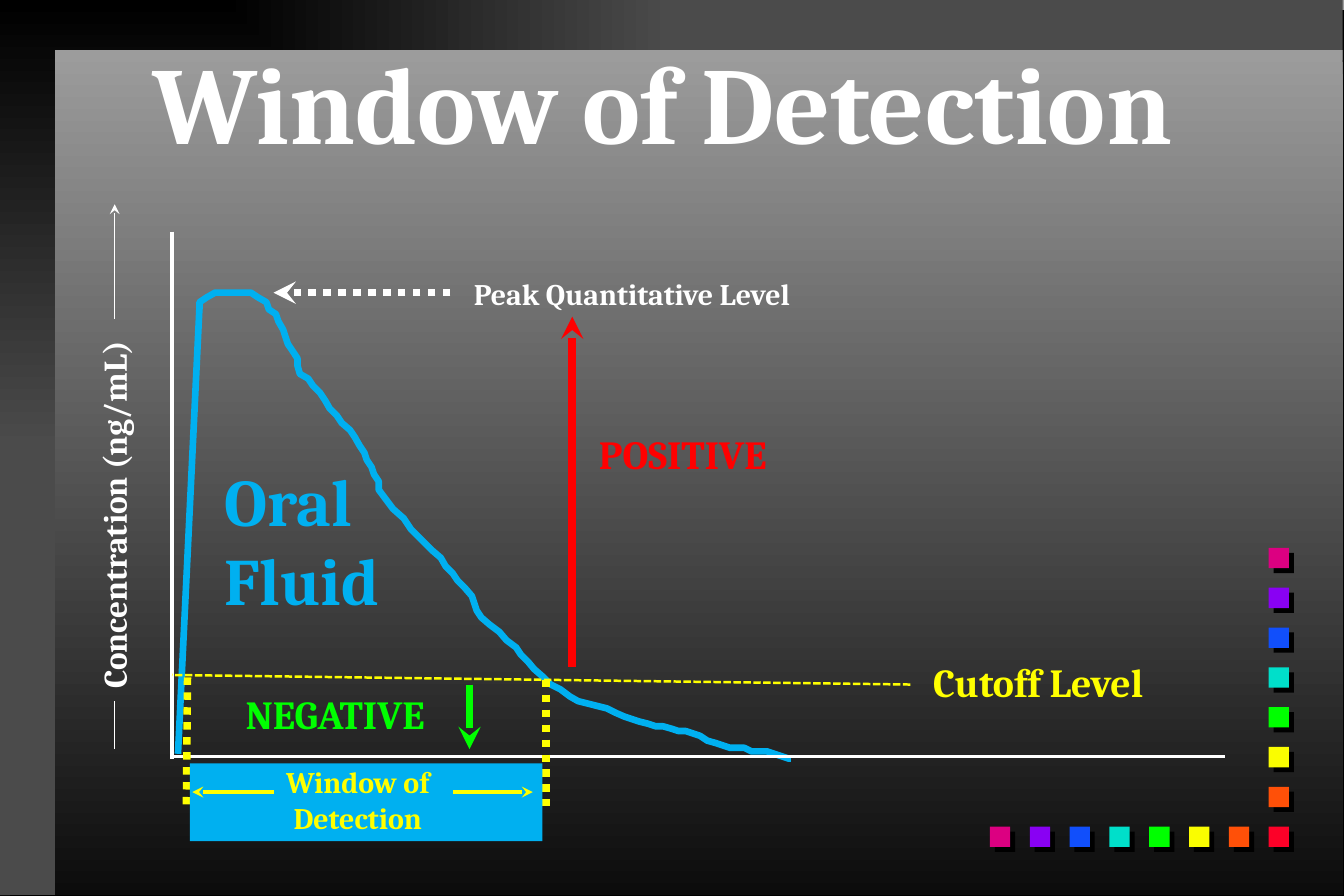
from lxml import etree
from pptx import Presentation, util as u
from pptx.dml.color import RGBColor
from pptx.enum import dml, shapes, text
from pptx.oxml import parse_xml
from pptx.oxml.ns import nsdecls, qn

COLORS = {
    "white": "FFFFFF", "black": "000000", "blue": "00B0F0",
    "yellow": "FFFF00", "green": "00FF00", "red": "FF0000",
    "gray_top": "9C9C9C", "gray_bottom": "0C0C0C", "frame": "4B4B4B",
}
# Decorative squares, from the corner outwards
SQUARES = ["FC0128", "FF5008", "FAFD00", "00FF00",
           "00DFCA", "114FFB", "8901F3", "DC0081"]
SYS_DOT, SYS_DASH = dml.MSO_LINE.ROUND_DOT, dml.MSO_LINE.SQUARE_DOT

# Falling part of the concentration curve, in inches
CURVE = [
    (1.67, 2.59), (1.67, 2.53), (1.73, 2.49), (1.8, 2.45), (2.1, 2.45),
    (2.16, 2.49), (2.23, 2.53), (2.25, 2.59), (2.31, 2.63), (2.33, 2.69),
    (2.37, 2.76), (2.39, 2.82), (2.41, 2.88), (2.45, 2.94), (2.49, 3),
    (2.49, 3.06), (2.51, 3.13), (2.58, 3.17), (2.62, 3.23), (2.68, 3.29),
    (2.72, 3.35), (2.76, 3.42), (2.82, 3.48), (2.86, 3.54), (2.93, 3.6),
    (2.97, 3.66), (3.01, 3.73), (3.05, 3.79), (3.07, 3.85), (3.11, 3.91),
    (3.13, 3.97), (3.17, 4.03), (3.17, 4.1), (3.23, 4.18), (3.29, 4.26),
    (3.38, 4.34), (3.44, 4.43), (3.5, 4.49), (3.56, 4.55), (3.62, 4.61),
    (3.69, 4.67), (3.73, 4.74), (3.79, 4.8), (3.83, 4.86), (3.89, 4.92),
    (3.95, 4.99), (3.97, 5.05), (3.99, 5.11), (4.03, 5.17), (4.1, 5.23),
    (4.18, 5.29), (4.24, 5.36), (4.32, 5.42), (4.36, 5.48), (4.42, 5.54),
    (4.47, 5.6), (4.55, 5.67), (4.61, 5.73), (4.69, 5.77), (4.77, 5.83),
    (4.84, 5.87), (4.92, 5.89), (5.08, 5.93), (5.16, 5.97), (5.23, 6),
    (5.29, 6.02), (5.35, 6.04), (5.43, 6.06), (5.49, 6.08), (5.55, 6.08),
    (5.62, 6.1), (5.68, 6.12), (5.74, 6.12), (5.8, 6.14), (5.86, 6.16),
    (5.92, 6.2), (5.99, 6.22), (6.05, 6.24), (6.11, 6.26), (6.23, 6.26),
    (6.29, 6.29), (6.42, 6.29), (6.48, 6.31), (6.54, 6.33), (6.6, 6.35),
    (6.62, 6.35),
]


def rgb(color):
    return RGBColor.from_string(COLORS.get(color, color))


class Deck:
    """Holds the text style and the current slide."""

    font = "Cambria"

    def __init__(self, width, height):
        self.prs = Presentation()
        self.prs.slide_width = u.Inches(width)
        self.prs.slide_height = u.Inches(height)
        self.s = self.prs.slides.add_slide(self.prs.slide_layouts[5])

    def gradient(self, fill, first, last):
        fill.gradient()
        fill.gradient_angle = 270
        for stop, color, position in zip(fill.gradient_stops, (first, last), (0, 1)):
            stop.color.rgb = rgb(color)
            stop.position = position

    def rect(self, x, y, w, h, color, last=None, shadow=0):
        sp = self.s.shapes.add_shape(
            shapes.MSO_SHAPE.RECTANGLE, *map(u.Inches, (x, y, w, h)))
        if last:
            self.gradient(sp.fill, color, last)
        else:
            sp.fill.solid()
            sp.fill.fore_color.rgb = rgb(color)
        sp.line.fill.background()
        sp.shadow.inherit = False
        if shadow:
            effects = sp.element.spPr.find(qn("a:effectLst"))
            effects.append(parse_xml(
                f'<a:outerShdw {nsdecls("a")} dist="{u.Pt(shadow)}" dir="2700000" '
                f'algn="ctr" rotWithShape="0"><a:srgbClr val="{COLORS["black"]}"/>'
                '</a:outerShdw>'))
        return sp

    def corner_gradient(self, sp):
        lin = next(sp.element.iter(qn("a:lin")))
        lin.getparent().replace(lin, parse_xml(
            f'<a:path {nsdecls("a")} path="rect">'
            '<a:fillToRect r="100000" b="100000"/></a:path>'))

    def line(self, start, end, color, width, dash=None, arrow=False):
        cx = self.s.shapes.add_connector(
            shapes.MSO_CONNECTOR.STRAIGHT, *map(u.Inches, start + end))
        cx.line.color.rgb = rgb(color)
        cx.line.width = u.Pt(width)
        if dash:
            cx.line.dash_style = dash
        if arrow:
            ln = cx.element.spPr.find(qn("a:ln"))
            etree.SubElement(ln, qn("a:tailEnd"), type="stealth")
        etree.SubElement(cx.element.spPr, qn("a:effectLst"))

    def curve(self, points, color, width):
        builder = self.s.shapes.build_freeform(
            *map(u.Inches, points[0]), scale=1.0)
        builder.add_line_segments(
            [tuple(map(u.Inches, point)) for point in points[1:]], close=False)
        sp = builder.convert_to_shape()
        sp.fill.background()
        sp.line.color.rgb = rgb(color)
        sp.line.width = u.Pt(width)
        sp.shadow.inherit = False

    def style(self, tf, size, color, align):
        for p in tf.paragraphs:
            p.alignment = align
            for r in p.runs:
                r.font.name = self.font
                r.font.size = u.Pt(size)
                r.font.bold = True
                r.font.color.rgb = rgb(color)

    def label(self, words, x, y, w, h, size, color,
              align=text.PP_ALIGN.CENTER, rotation=0):
        sp = self.s.shapes.add_textbox(*map(u.Inches, (x, y, w, h)))
        sp.rotation = rotation
        tf = sp.text_frame
        tf.text = words
        tf.word_wrap = False
        tf.auto_size = text.MSO_AUTO_SIZE.SHAPE_TO_FIT_TEXT
        self.style(tf, size, color, align)

    def title(self, words, x, y, w, h, size, color):
        sp = self.s.shapes.title
        self.s.shapes.element.append(sp.element)  # bring above the backdrop
        sp.left, sp.top, sp.width, sp.height = map(u.Inches, (x, y, w, h))
        tf = sp.text_frame
        tf.text = words
        tf.word_wrap = True
        tf.auto_size = text.MSO_AUTO_SIZE.NONE
        tf.vertical_anchor = text.MSO_ANCHOR.BOTTOM
        tf.paragraphs[0].line_spacing = 0.9
        self.style(tf, size, color, text.PP_ALIGN.CENTER)


def main():
    d = Deck(11.25, 7.5)
    left = text.PP_ALIGN.LEFT

    # Backdrop
    d.gradient(d.s.background.fill, "gray_top", "gray_bottom")
    d.corner_gradient(d.rect(0, 0, 11.24, 7.49, "black", "frame", shadow=8.5))
    d.rect(0.46, 0.42, 10.78, 7.07, "gray_top", "gray_bottom", shadow=8.5)

    # Row and column of squares sharing one corner
    for dx, dy in ((1, 0), (0, 1)):
        for i, color in enumerate(SQUARES):
            if i or dx:
                d.rect(10.62 - dx * i / 3, 6.92 - dy * i / 3,
                       0.17, 0.17, color, shadow=4.2)

    # Concentration curve and axes
    d.curve(CURVE, "blue", 4)
    d.line((1.49, 6.31), (1.67, 2.57), "blue", 4)
    d.line((1.44, 1.94), (1.44, 6.35), "white", 2)
    d.line((1.44, 6.33), (10.25, 6.33), "white", 2)
    d.label("Oral\nFluid", 1.78, 3.8, 1.57, 1.45, 40, "blue", left)
    d.label("Concentration (ng/mL)", -0.6, 4.09, 3.11, 0.44, 20, "white", left, 270)
    d.line((0.96, 6.27), (0.96, 5.87), "white", 1)
    d.line((0.96, 2.67), (0.96, 1.71), "white", 1, arrow=True)

    d.title("Window of Detection", 0.46, 0.31, 10.17, 1.15, 66, "white")

    # Detection window
    d.line((4.57, 5.69), (4.57, 6.75), "yellow", 4.5, SYS_DOT)
    d.line((1.57, 5.67), (1.56, 6.75), "yellow", 4.5, SYS_DOT)
    d.rect(1.59, 6.39, 2.95, 0.65, "blue")
    d.label("Window of\nDetection", 2.23, 6.34, 1.53, 0.71, 18, "yellow")
    d.line((2.29, 6.63), (1.61, 6.63), "yellow", 2.25, arrow=True)
    d.line((3.79, 6.63), (4.46, 6.63), "yellow", 2.25, arrow=True)

    # Levels and results
    d.label("Peak Quantitative Level", 3.8, 2.26, 2.98, 0.4, 18, "white")
    d.label("NEGATIVE", 1.78, 5.72, 2.05, 0.5, 24, "green")
    d.label("POSITIVE", 4.79, 3.55, 1.85, 0.5, 24, "red")
    d.line((3.93, 5.73), (3.93, 6.27), "green", 4.5, arrow=True)
    d.line((4.79, 5.58), (4.79, 2.65), "red", 4.5, arrow=True)
    d.line((3.77, 2.45), (2.29, 2.45), "white", 4.5, SYS_DOT, arrow=True)
    d.line((7.62, 5.73), (1.44, 5.65), "yellow", 1.5, SYS_DASH)
    d.label("Cutoff Level", 7.62, 5.46, 2.14, 0.5, 24, "yellow")

    d.prs.save("out.pptx")


if __name__ == "__main__":
    main()
